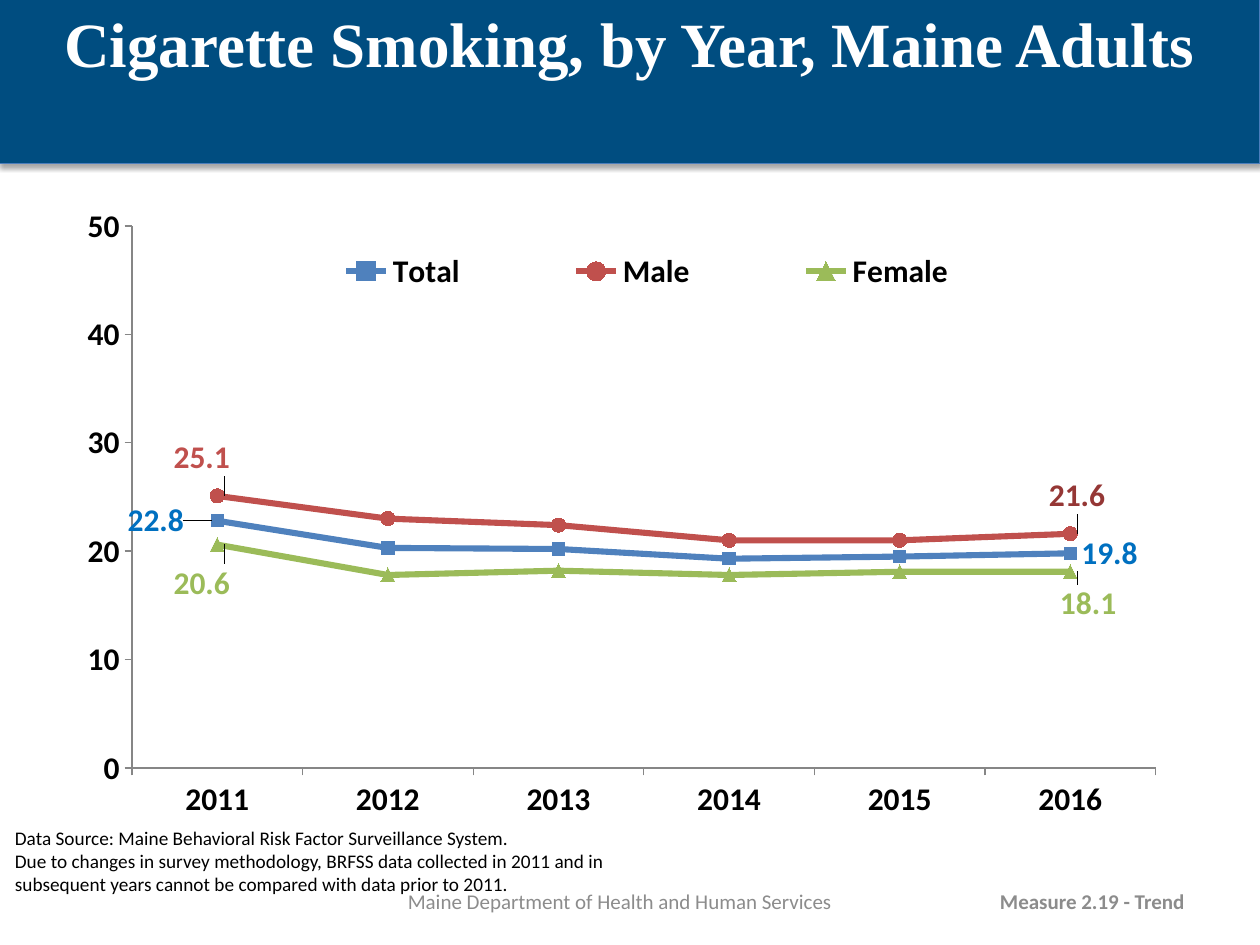
from lxml import etree
from pptx import Presentation
from pptx.chart.data import CategoryChartData
from pptx.dml.color import RGBColor
from pptx.enum.chart import (XL_CHART_TYPE, XL_LABEL_POSITION, XL_LEGEND_POSITION,
                             XL_MARKER_STYLE, XL_TICK_MARK)
from pptx.enum.shapes import MSO_SHAPE
from pptx.enum.text import MSO_ANCHOR, PP_ALIGN
from pptx.oxml import parse_xml
from pptx.oxml.ns import nsdecls, qn
from pptx.util import Pt

PX = 9144  # 100 px to the inch
LEFT, CENTER, RIGHT = PP_ALIGN.LEFT, PP_ALIGN.CENTER, PP_ALIGN.RIGHT
TOP, MIDDLE = MSO_ANCHOR.TOP, MSO_ANCHOR.MIDDLE
LABEL_LEFT, LABEL_RIGHT = XL_LABEL_POSITION.LEFT, XL_LABEL_POSITION.RIGHT
SQUARE, CIRCLE, TRIANGLE = (XL_MARKER_STYLE.SQUARE, XL_MARKER_STYLE.CIRCLE,
                            XL_MARKER_STYLE.TRIANGLE)
OUTSIDE = XL_TICK_MARK.OUTSIDE

YEARS = ["2011", "2012", "2013", "2014", "2015", "2016"]
# name, values, colour, marker, marker size,
# labels: point index, colour, position, shift as a share of the chart
SERIES = [
    ("Total", [22.8, 20.3, 20.2, 19.3, 19.5, 19.8], "4F81BD", SQUARE, 7,
     [(0, "0070C0", LABEL_LEFT, (-0.02, 0)), (5, "0070C0", LABEL_RIGHT, None)]),
    ("Male", [25.1, 23.0, 22.4, 21.0, 21.0, 21.6], "C0504D", CIRCLE, 8,
     [(0, "C0504D", LABEL_RIGHT, (-0.05, -0.06)),
      (5, "953735", LABEL_RIGHT, (-0.03, -0.06))]),
    ("Female", [20.6, 17.8, 18.2, 17.8, 18.1, 18.1], "9BBB59", TRIANGLE, 8,
     [(0, "9BBB59", LABEL_RIGHT, (-0.05, 0.06)),
      (5, "9BBB59", LABEL_RIGHT, (-0.02, 0.05))]),
]


def color(hex_text):
    return RGBColor.from_string(hex_text)


def to_emu(box):
    return [value * PX for value in box]


def style_font(font, size, hex_text, bold=False, name="Calibri"):
    font.size, font.bold, font.name = Pt(size), bold, name
    font.color.rgb = color(hex_text)


def write_text(shape, text, size, hex_text, align, anchor, **font_options):
    frame = shape.text_frame
    frame.word_wrap = True
    frame.vertical_anchor = anchor
    frame.text = text
    for para in frame.paragraphs:
        para.alignment = align
        for span in para.runs:
            style_font(span.font, size, hex_text, **font_options)


def add_text(page, box, *text_options, **font_options):
    shape = page.shapes.add_textbox(*to_emu(box))
    write_text(shape, *text_options, **font_options)


def add_title_band(page, box, text):
    band = page.shapes.add_shape(MSO_SHAPE.RECTANGLE, *to_emu(box))
    band.fill.solid()
    band.fill.fore_color.rgb = color("004D80")
    band.line.color.rgb = color("4B7EBC")
    band.line.width = Pt(0.75)
    band.shadow.inherit = False
    effects = band._element.spPr.find(qn("a:effectLst"))
    effects.append(parse_xml(
        f'<a:outerShdw {nsdecls("a")} blurRad="{Pt(3.1)}" dist="{Pt(1.8)}" '
        'dir="5400000" rotWithShape="0"><a:srgbClr val="000000">'
        '<a:alpha val="35000"/></a:srgbClr></a:outerShdw>'))
    write_text(band, text, 36, "FFFFFF", CENTER, TOP, bold=True, name="Times New Roman")


def make_layout(**values):
    """Manual chart layout; the keywords are its child elements in order."""
    layout = etree.Element(qn("c:layout"))
    manual = etree.SubElement(layout, qn("c:manualLayout"))
    for name, value in values.items():
        etree.SubElement(manual, qn(f"c:{name}")).set("val", str(value))
    return layout


def set_layout(parent, layout, index):
    for old in parent.findall(qn("c:layout")):
        parent.remove(old)
    parent.insert(index, layout)


def style_axis(axis):
    axis.major_tick_mark = OUTSIDE
    axis.has_major_gridlines = False
    axis.format.line.color.rgb = color("868686")
    axis.format.line.width = Pt(0.75)


def style_series(series, hex_text, marker_style, marker_size, labels):
    series.smooth = False
    series.format.line.color.rgb = color(hex_text)
    series.format.line.width = Pt(3.5)
    marker = series.marker
    marker.style, marker.size = marker_style, marker_size
    marker.format.fill.solid()
    marker.format.fill.fore_color.rgb = color(hex_text)
    marker.format.line.color.rgb = color(hex_text)
    series.data_labels.show_value = False
    for index, label_color, position, shift in labels:
        label = series.points[index].data_label
        style_font(label.font, 18, label_color, bold=True)
        label.position = position
        if shift:
            entry = series.data_labels._element.findall(qn("c:dLbl"))[-1]
            set_layout(entry, make_layout(x=shift[0], y=shift[1]), 1)


def add_trend_chart(page, box):
    data = CategoryChartData(number_format="0.0")
    data.categories = YEARS
    for name, values, *_ in SERIES:
        data.add_series(name, values)
    chart = page.shapes.add_chart(XL_CHART_TYPE.LINE_MARKERS, *to_emu(box), data).chart
    chart.has_title = False
    style_font(chart.font, 18, "000000", bold=True)
    chart.plots[0].vary_by_categories = False

    # Axes and plot area
    style_axis(chart.category_axis)
    value_axis = chart.value_axis
    style_axis(value_axis)
    value_axis.minimum_scale, value_axis.maximum_scale = 0, 50
    value_axis.major_unit = 10
    value_axis.tick_labels.number_format = "0"
    value_axis.tick_labels.number_format_is_linked = False
    plot_area = chart._chartSpace.chart.plotArea
    set_layout(plot_area, make_layout(layoutTarget="inner", xMode="edge", yMode="edge",
                                      x=0.063, y=0.044, w=0.918, h=0.847), 0)

    # Legend in one row across the top
    chart.has_legend = True
    legend = chart.legend
    legend.position = XL_LEGEND_POSITION.RIGHT
    legend.include_in_layout = True
    set_layout(legend._element, make_layout(xMode="edge", yMode="edge",
                                            x=0.16, y=0.07, w=0.73, h=0.09), 1)

    for series, (_, _, *look) in zip(chart.plots[0].series, SERIES):
        style_series(series, *look)


def add_notes_and_footer(page, box):
    left, top, width, _ = box
    add_text(page, (left + 2, top, 500, 66),
             "Data Source: Maine Behavioral Risk Factor Surveillance System.\n"
             "Due to changes in survey methodology, BRFSS data collected in 2011 and in "
             "subsequent years cannot be compared with data prior to 2011.",
             11, "000000", LEFT, TOP)
    footer_top = top + 44
    add_text(page, (left + 292, footer_top, 400, 40),
             "Maine Department of Health and Human Services", 12, "8C8C8C", CENTER, MIDDLE)
    add_text(page, (left + width - 283, footer_top, 233, 40),
             "Measure 2.19 - Trend", 12, "8C8C8C", RIGHT, MIDDLE, bold=True)


def main():
    deck = Presentation()
    deck.slide_width, deck.slide_height = 1000 * PX, 750 * PX
    page = deck.slides.add_slide(deck.slide_layouts[6])
    add_title_band(page, (-1, -1, 1001, 131), "Cigarette Smoking, by Year, Maine Adults")
    add_trend_chart(page, (49, 157, 885, 508))
    add_notes_and_footer(page, (0, 651, 1000, 99))
    deck.save("out.pptx")


if __name__ == "__main__":
    main()
